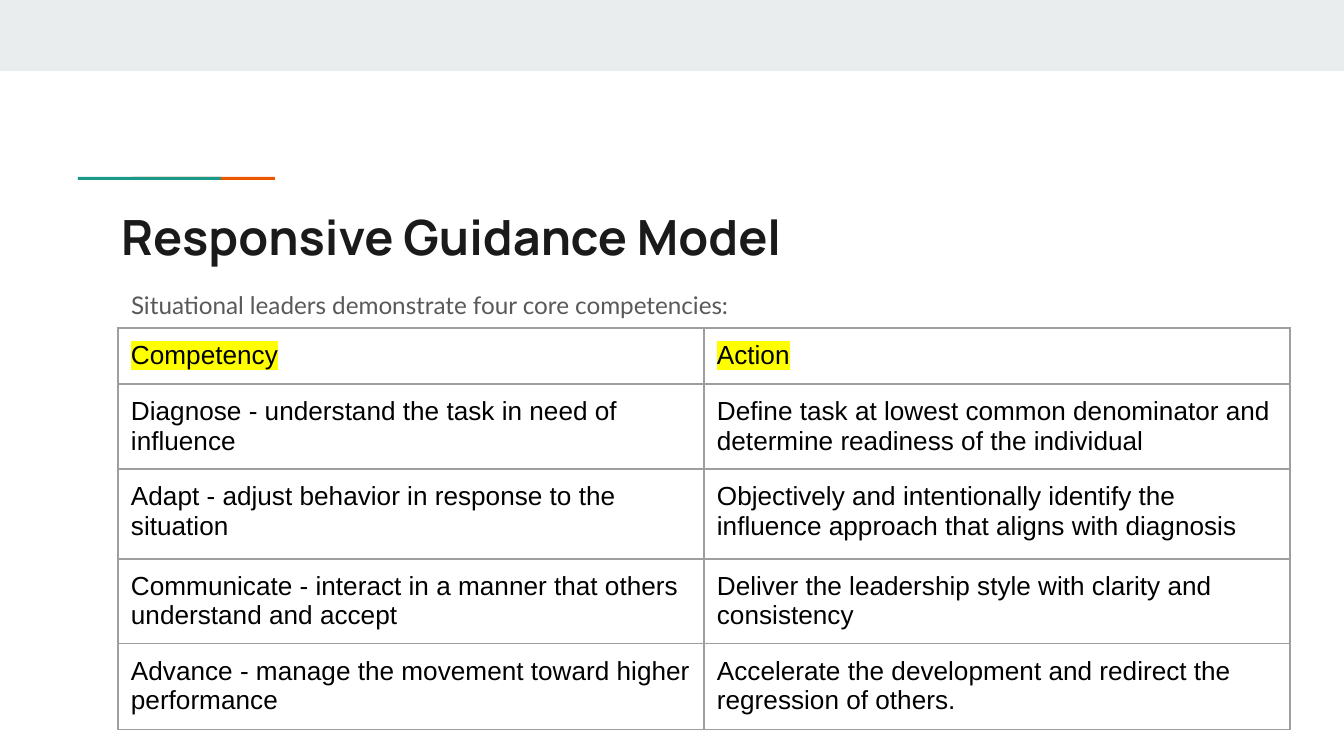
"""Build the Responsive Guidance Model slide with its competency table."""
import pptx
import pptx.util
import pptx.dml.color
import pptx.enum.shapes
import pptx.enum.text
import pptx.oxml
import pptx.oxml.ns

RGB = pptx.dml.color.RGBColor
BAND = RGB(0xE9, 0xED, 0xEE)
TEAL = RGB(0x1A, 0x99, 0x88)
ORANGE = RGB(0xEB, 0x56, 0x00)
INK = RGB(0x1A, 0x1A, 0x1A)
GRAY = RGB(0x59, 0x59, 0x59)
BLACK = RGB(0x00, 0x00, 0x00)
RULE = RGB(0x9E, 0x9E, 0x9E)
YELLOW = RGB(0xFF, 0xFF, 0x00)
SCALE = 914400 / 134.4
PAD = 13
NS = pptx.oxml.ns.nsdecls("a")


def px(num):
    return pptx.util.Emu(round(num * SCALE))


def write(frame, text, size, name, color, bold=False):
    form = {"word_wrap": True, "vertical_anchor": pptx.enum.text.MSO_ANCHOR.TOP}
    form.update({"margin_" + side: px(PAD) for side in ("left", "right", "top", "bottom")})
    for key, val in form.items():
        setattr(frame, key, val)
    para = frame.paragraphs[0]
    para.alignment = pptx.enum.text.PP_ALIGN.LEFT
    para.space_before = pptx.util.Pt(0)
    run = para.add_run()
    run.text = text
    for key, val in {"size": pptx.util.Pt(size), "name": name, "bold": bold}.items():
        setattr(run.font, key, val)
    run.font.color.rgb = color
    return run


deck = pptx.Presentation()
deck.slide_width, deck.slide_height = px(1344), px(756)
slide = deck.slides.add_slide(deck.slide_layouts[1])
shapes = slide.shapes
title, body = slide.placeholders

bars = [
    (0, 0, 1344, 71, BAND),
    (133, 177, 142, 3, ORANGE),
    (78, 177, 143, 3, TEAL),
]
for *box, color in bars:
    bar = shapes.add_shape(pptx.enum.shapes.MSO_SHAPE.RECTANGLE, *map(px, box))
    bar.shadow.inherit = False
    bar.fill.solid()
    bar.fill.fore_color.rgb = color
    bar.line.fill.background()

heads = [
    (title, (108, 194, 1130, 79), "Responsive Guidance Model", 26, "Manrope", INK, True),
    (body, (118, 273, 1130, 55), "Situational leaders demonstrate four core competencies:",
     13, "Lato", GRAY, False),
]
for shape, box, *form in heads:
    for key, val in zip(("left", "top", "width", "height"), box):
        setattr(shape, key, px(val))
    write(shape.text_frame, *form)
    shape.text_frame.auto_size = pptx.enum.text.MSO_AUTO_SIZE.NONE

para = body.text_frame.paragraphs[0]
para.line_spacing = 1.15
props = para._p.get_or_add_pPr()
props.set("marL", "0")
props.set("indent", "0")
props.append(pptx.oxml.parse_xml(f"<a:buNone {NS}/>"))

rows = [
    (56, "Competency", "Action"),
    (85, "Diagnose - understand the task in need of influence",
     "Define task at lowest common denominator and determine readiness of the individual"),
    (90, "Adapt - adjust behavior in response to the situation",
     "Objectively and intentionally identify the influence approach that aligns with diagnosis"),
    (85, "Communicate - interact in a manner that others understand and accept",
     "Deliver the leadership style with clarity and consistency"),
    (86, "Advance - manage the movement toward higher performance",
     "Accelerate the development and redirect the regression of others."),
]
high = sum(row[0] for row in rows)
table = shapes.add_table(len(rows), 2, px(118), px(328), px(1172), px(high)).table
table.first_row = table.horz_banding = False
for col in table.columns:
    col.width = px(586)

for r, (tall, *texts) in enumerate(rows):
    table.rows[r].height = px(tall)
    for c, text in enumerate(texts):
        cell = table.cell(r, c)
        run = write(cell.text_frame, text, 14, "Arial", BLACK)
        for side in ("left", "right", "top", "bottom"):
            setattr(cell, "margin_" + side, px(PAD))
        cell.fill.background()
        if r == 0:
            mark = f'<a:highlight {NS}><a:srgbClr val="{YELLOW}"/></a:highlight>'
            fill = run.font._element.find(pptx.oxml.ns.qn("a:solidFill"))
            fill.addnext(pptx.oxml.parse_xml(mark))
        for i, side in enumerate("LRTB"):
            edge = (f'<a:ln{side} {NS} w="{pptx.util.Pt(0.75)}"><a:solidFill>'
                    f'<a:srgbClr val="{RULE}"/></a:solidFill></a:ln{side}>')
            cell._tc.get_or_add_tcPr().insert(i, pptx.oxml.parse_xml(edge))

deck.save("out.pptx")
